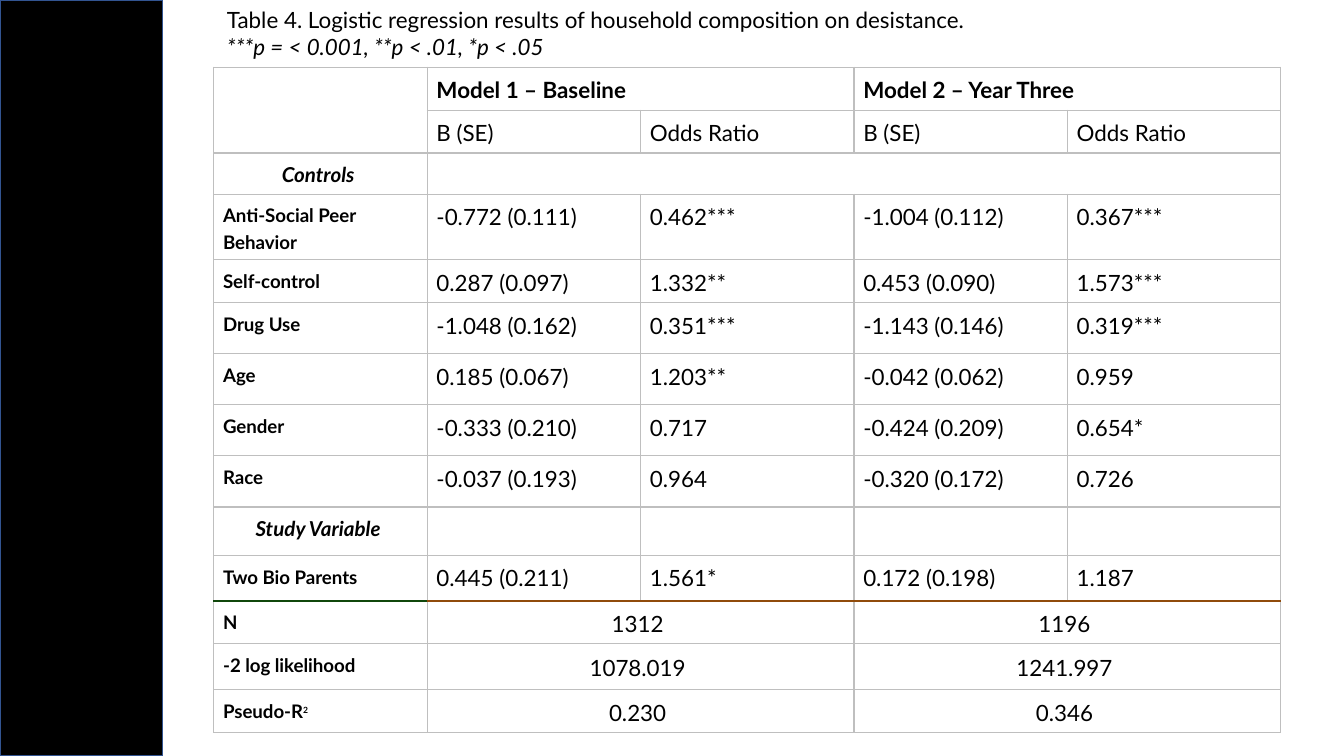
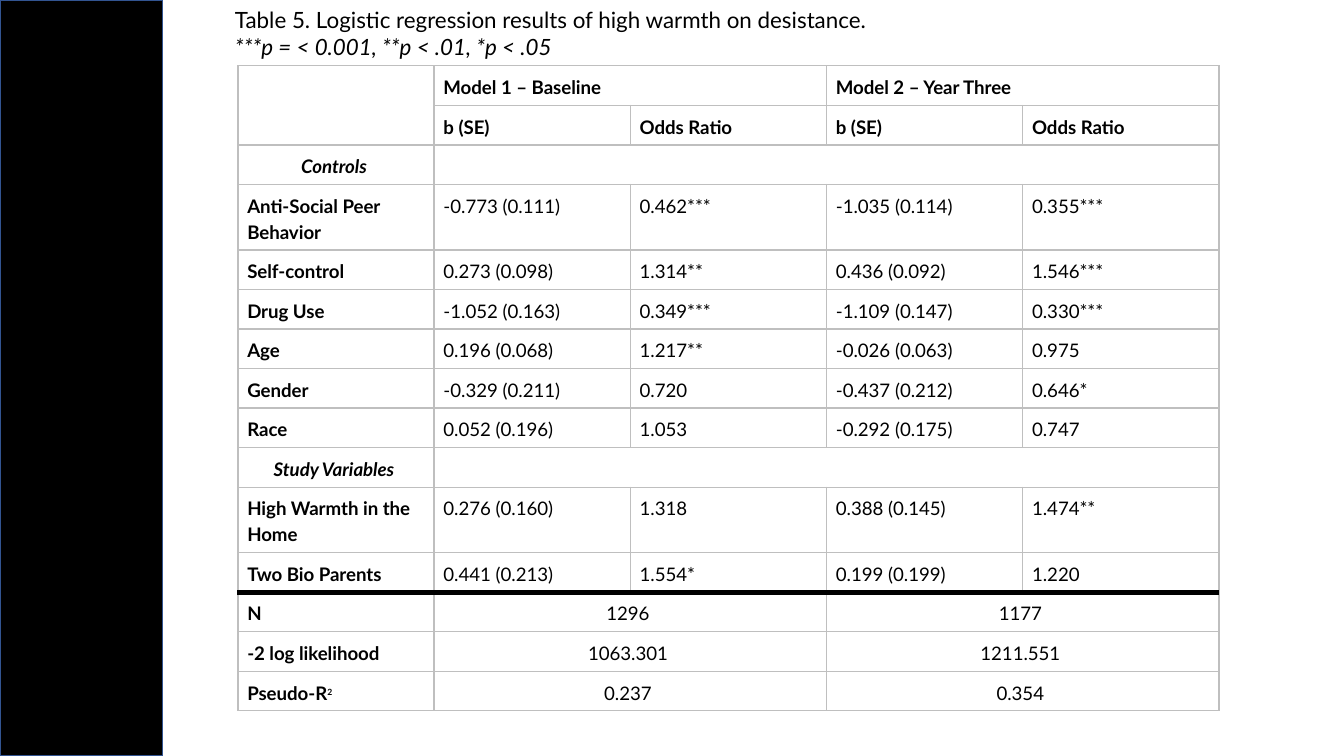
from lxml import etree
from pptx import Presentation
from pptx.dml.color import RGBColor
from pptx.enum.shapes import MSO_SHAPE
from pptx.enum.text import MSO_ANCHOR, PP_ALIGN
from pptx.oxml.ns import qn
from pptx.util import Inches, Pt

RECTANGLE = MSO_SHAPE.RECTANGLE
LEFT, CENTER = PP_ALIGN.LEFT, PP_ALIGN.CENTER
TOP, MIDDLE = MSO_ANCHOR.TOP, MSO_ANCHOR.MIDDLE

PAGE_WIDTH = Inches(10)
PAGE_HEIGHT = PAGE_WIDTH * 9 // 16
FONT = "Lato"
BLACK, GRID, BAND_EDGE = "000000", "BFBFBF", "325491"
GREEN, BROWN = "10470B", "904B0B"
SPACING = {10: 13.95, 11: 14.85, 12: 15.75}
ENDING = " "
SIGNIFICANCE = "***p = < 0.001, **p < .01, *p < .05"
SUMMARY_ROWS = 3

HOUSEHOLD = {
    "caption": "Table 4. Logistic regression results of household composition on desistance.",
    "caption_box": (1.59, 0, 6.68, 0.5),
    "table_box": (1.59, 0.5, 7.94),
    "heights": [0.26, 0.26, 0.26, 0.41, 0.26] + [0.38] * 4 + [0.36, 0.34, 0.26, 0.34, 0.27],
    "value_size": 12,
    "section_size": 11,
    "bold_subheads": False,
    "summary_anchor": MIDDLE,
    "rule": (GREEN, BROWN, 1.5),
    "rows": [
        "|Model 1 – Baseline|Model 2 – Year Three",
        "|B (SE)|Odds Ratio|B (SE)|Odds Ratio",
        "Controls",
        "Anti-Social Peer Behavior|-0.772 (0.111)|0.462***|-1.004 (0.112)|0.367***",
        "Self-control|0.287 (0.097)|1.332**|0.453 (0.090)|1.573***",
        "Drug Use|-1.048 (0.162)|0.351***|-1.143 (0.146)|0.319***",
        "Age|0.185 (0.067)|1.203**|-0.042 (0.062)|0.959",
        "Gender|-0.333 (0.210)|0.717|-0.424 (0.209)|0.654*",
        "Race|-0.037 (0.193)|0.964|-0.320 (0.172)|0.726",
        "Study Variable||||",
        "Two Bio Parents|0.445 (0.211)|1.561*|0.172 (0.198)|1.187",
        "N|1312|1196",
        "-2 log likelihood|1078.019|1241.997",
        "Pseudo-R^2|0.230|0.346",
    ],
}

WARMTH = {
    "caption": "Table 5. Logistic regression results of high warmth on desistance.",
    "caption_box": (1.65, 0, 8.03, 0.71),
    "table_box": (1.77, 0.49, 7.3),
    "heights": [0.25] * 3 + [0.43] + [0.25] * 6 + [0.43] + [0.25] * 3 + [0.28],
    "value_size": 10,
    "section_size": 10,
    "bold_subheads": True,
    "summary_anchor": TOP,
    "rule": (BLACK, BLACK, 3),
    "rows": [
        "|Model 1 – Baseline|Model 2 – Year Three",
        "|b (SE)|Odds Ratio|b (SE)|Odds Ratio",
        "Controls",
        "Anti-Social Peer Behavior|-0.773 (0.111)|0.462***|-1.035 (0.114)|0.355***",
        "Self-control|0.273 (0.098)|1.314**|0.436 (0.092)|1.546***",
        "Drug Use|-1.052 (0.163)|0.349***|-1.109 (0.147)|0.330***",
        "Age|0.196 (0.068)|1.217**|-0.026 (0.063)|0.975",
        "Gender|-0.329 (0.211)|0.720|-0.437 (0.212)|0.646*",
        "Race|0.052 (0.196)|1.053|-0.292 (0.175)|0.747",
        "Study Variables",
        "High Warmth in the Home|0.276 (0.160)|1.318|0.388 (0.145)|1.474**",
        "Two Bio Parents|0.441 (0.213)|1.554*|0.199 (0.199)|1.220",
        "N|1296|1177",
        "-2 log likelihood|1063.301|1211.551",
        "Pseudo-R^2|0.237|0.354",
    ],
}


def color(value):
    """Turn a hex string into a colour."""
    return RGBColor.from_string(value)


def write(para, text, size=12, bold=False, italic=False, align=LEFT, spacing=None):
    """Write text into a paragraph, raising whatever follows a caret."""
    para.alignment = align
    if spacing:
        para.line_spacing = Pt(spacing)
    for index, part in enumerate((text + ENDING).split("^")):
        span = para.add_run()
        span.text = part
        span.font.name = FONT
        span.font.size = Pt(8 if index else size)
        span.font.bold = bold
        span.font.italic = italic
        span.font.color.rgb = color(BLACK)
        if index:
            span.font._element.set("baseline", "30000")


def add_band(page):
    """Draw the black side band over the full page height."""
    band = page.shapes.add_shape(RECTANGLE, 0, 0, Inches(1.21), PAGE_HEIGHT)
    band.shadow.inherit = False
    band.fill.solid()
    band.fill.fore_color.rgb = color(BLACK)
    band.line.color.rgb = color(BAND_EDGE)
    band.line.width = Pt(1)


def add_caption(page, caption, left, top, width, height):
    """Place the table caption and its significance key."""
    box = page.shapes.add_textbox(
        Inches(left), Inches(top), Inches(width), Inches(height))
    frame = box.text_frame
    frame.word_wrap = True
    write(frame.paragraphs[0], caption)
    write(frame.add_paragraph(), SIGNIFICANCE, italic=True)


def add_borders(cell, **edges):
    """Line the four sides of a cell, grey unless an edge is given."""
    props = cell._tc.get_or_add_tcPr()
    for side in "LRTB":
        shade, width = edges.get(side, (GRID, 0.75))
        line = etree.SubElement(props, qn(f"a:ln{side}"), w=str(Pt(width)))
        fill = etree.SubElement(line, qn("a:solidFill"))
        etree.SubElement(fill, qn("a:srgbClr"), val=shade)


def style_cells(table, study):
    """Give every cell its margins, borders and empty-text size."""
    first_shade, other_shade, width = study["rule"]
    summary = len(study["rows"]) - SUMMARY_ROWS
    for row, cells in enumerate(table.rows):
        for column, cell in enumerate(cells.cells):
            edge = (other_shade if column else first_shade, width)
            sides = {summary - 1: {"B": edge}, summary: {"T": edge}}
            add_borders(cell, **sides.get(row, {}))
            cell.fill.background()
            cell.margin_left = cell.margin_right = Inches(0.07)
            cell.margin_top = cell.margin_bottom = Inches(0.05)
            para = cell.text_frame.paragraphs[0]
            etree.SubElement(para._p, qn("a:endParaRPr"), sz="1000")


def fill_row(table, row, study):
    """Write one row, merging cells where it has fewer entries than columns."""
    label, *values = study["rows"][row].split("|")
    section = not any(values)
    summary = row >= len(study["rows"]) - SUMMARY_ROWS
    step = 4 // len(values) if values else 4
    if step > 1:
        for column in range(1, 5, step):
            table.cell(row, column).merge(table.cell(row, column + step - 1))
    if label:
        size = study["section_size"] if section else 10
        write(table.cell(row, 0).text_frame.paragraphs[0], label, size=size, bold=True,
              italic=section, align=CENTER if section else LEFT, spacing=SPACING[size])
    size = study["value_size"]
    bold = row == 0 or (row == 1 and study["bold_subheads"])
    for index, value in enumerate(values):
        cell = table.cell(row, 1 + index * step)
        if value:
            write(cell.text_frame.paragraphs[0], value, size=size, bold=bold,
                  align=CENTER if summary else LEFT, spacing=SPACING[size])
        if summary:
            cell.vertical_anchor = study["summary_anchor"]


def add_results(page, study, left, top, width):
    """Build the regression table."""
    heights = study["heights"]
    table = page.shapes.add_table(
        len(heights), 5, Inches(left), Inches(top),
        Inches(width), Inches(sum(heights))).table
    table.first_row = table.horz_banding = False
    for column in table.columns:
        column.width = Inches(width / 5)
    for row, height in zip(table.rows, heights):
        row.height = Inches(height)
    style_cells(table, study)
    table.cell(0, 0).merge(table.cell(1, 0))
    for row in range(len(heights)):
        fill_row(table, row, study)


def add_study(deck, study):
    """Add one results page."""
    page = deck.slides.add_slide(deck.slide_layouts[6])
    add_band(page)
    add_results(page, study, *study["table_box"])
    add_caption(page, study["caption"], *study["caption_box"])


def main():
    """Build and save the deck."""
    deck = Presentation()
    deck.slide_width, deck.slide_height = PAGE_WIDTH, PAGE_HEIGHT
    for study in (HOUSEHOLD, WARMTH):
        add_study(deck, study)
    deck.save("out.pptx")


if __name__ == "__main__":
    main()
